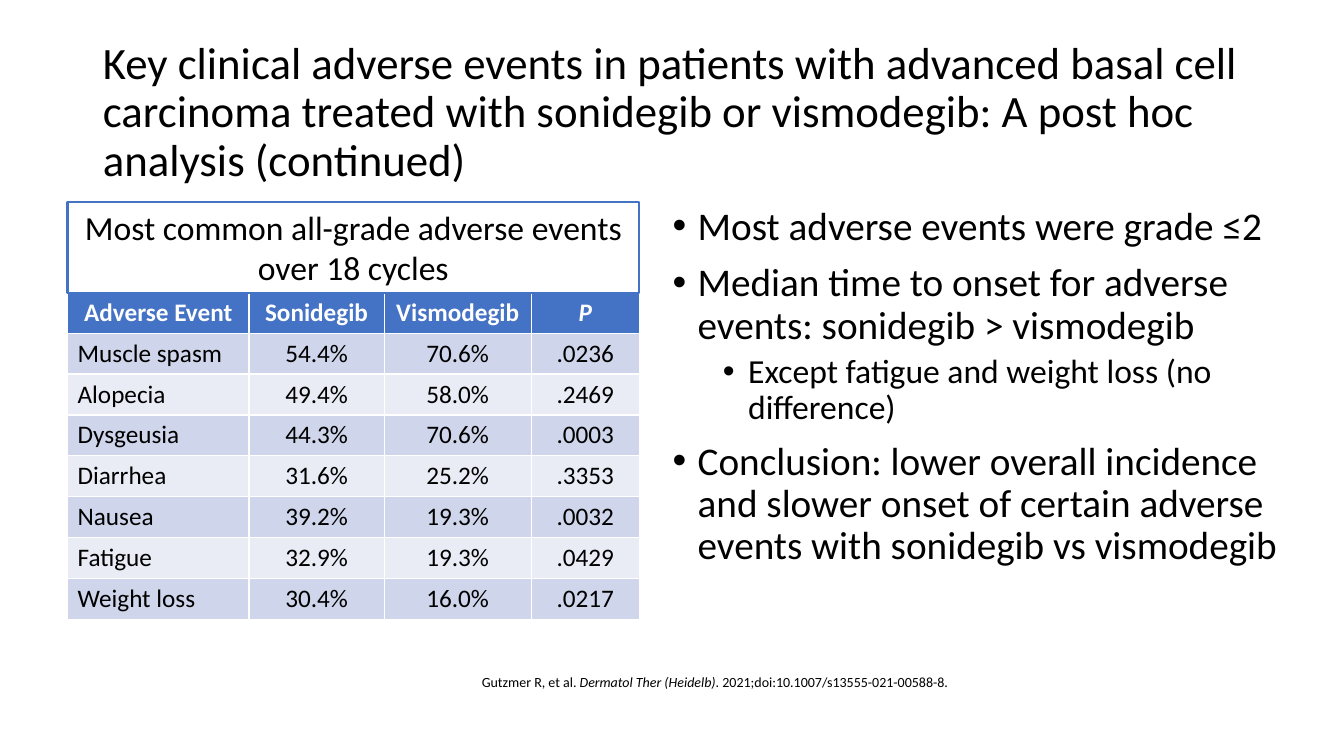
import pptx
import pptx.util
import pptx.dml.color
import pptx.enum.shapes
import pptx.enum.text
import pptx.oxml
import pptx.oxml.ns

Inches = pptx.util.Inches
Pt = pptx.util.Pt
RGBColor = pptx.dml.color.RGBColor
PP_ALIGN = pptx.enum.text.PP_ALIGN
MSO_ANCHOR = pptx.enum.text.MSO_ANCHOR
MSO_AUTO_SIZE = pptx.enum.text.MSO_AUTO_SIZE

TITLE = ("Key clinical adverse events in patients with advanced basal cell carcinoma "
         "treated with sonidegib or vismodegib: A post hoc analysis (continued)")
CAPTION = "Most common all-grade adverse events over 18 cycles"
EVENTS = [
    ("Adverse Event", "Sonidegib", "Vismodegib", "P"),
    ("Muscle spasm", "54.4%", "70.6%", ".0236"),
    ("Alopecia", "49.4%", "58.0%", ".2469"),
    ("Dysgeusia", "44.3%", "70.6%", ".0003"),
    ("Diarrhea", "31.6%", "25.2%", ".3353"),
    ("Nausea", "39.2%", "19.3%", ".0032"),
    ("Fatigue", "32.9%", "19.3%", ".0429"),
    ("Weight loss", "30.4%", "16.0%", ".0217"),
]
FINDINGS = [
    (0, "Most adverse events were grade ≤2"),
    (0, "Median time to onset for adverse events: sonidegib > vismodegib"),
    (1, "Except fatigue and weight loss (no difference)"),
    (0, "Conclusion: lower overall incidence and slower onset of certain "
        "adverse events with sonidegib vs vismodegib"),
]
CITATION = [
    ("Gutzmer R, et al. ", False),
    ("Dermatol Ther (Heidelb)", True),
    (". 2021;doi:10.1007/s13555-021-00588-8.", False),
]

FONT = "Calibri"
BLACK = RGBColor(0x00, 0x00, 0x00)
WHITE = RGBColor(0xFF, 0xFF, 0xFF)
BLUE = RGBColor(0x44, 0x72, 0xC4)
BAND_DARK = RGBColor(0xCF, 0xD5, 0xEA)
BAND_LIGHT = RGBColor(0xE9, 0xEB, 0xF5)

COLUMN_WIDTHS = (1.8, 1.34, 1.46, 1.07)
ROW_HEIGHT = 0.405
TABLE_LEFT = 0.67
CONTENT_TOP = 2
CAPTION_HEIGHT = 0.91
TABLE_TOP = 2.9
LEVELS = [(0.25, 28, 10), (0.75, 24, 5)]


def add_run(paragraph, text, size, color=BLACK, bold=False, italic=False):
    run = paragraph.add_run()
    run.text = text
    run.font.name = FONT
    run.font.size = Pt(size)
    run.font.color.rgb = color
    run.font.bold = bold
    run.font.italic = italic


def place(shape, left, top, width, height):
    shape.left, shape.top = Inches(left), Inches(top)
    shape.width, shape.height = Inches(width), Inches(height)


def add_bullet(paragraph, indent):
    properties = paragraph._p.get_or_add_pPr()
    properties.set("marL", str(Inches(indent)))
    properties.set("indent", str(Inches(-0.25)))
    for tag, name, value in (("a:buFont", "typeface", "Arial"), ("a:buChar", "char", "•")):
        element = pptx.oxml.parse_xml(f'<{tag} {pptx.oxml.ns.nsdecls("a")} {name}="{value}"/>')
        properties.append(element)


def add_title(slide):
    title = slide.shapes.title
    place(title, 0.92, 0.4, 11.5, 1.45)
    frame = title.text_frame
    frame.auto_size = MSO_AUTO_SIZE.NONE
    frame.vertical_anchor = MSO_ANCHOR.MIDDLE
    paragraph = frame.paragraphs[0]
    paragraph.alignment = PP_ALIGN.LEFT
    paragraph.line_spacing = 0.9
    add_run(paragraph, TITLE, 32)


def add_events_table(slide):
    table = slide.shapes.add_table(
        len(EVENTS), len(COLUMN_WIDTHS), Inches(TABLE_LEFT), Inches(TABLE_TOP),
        Inches(sum(COLUMN_WIDTHS)), Inches(ROW_HEIGHT * len(EVENTS))).table
    for column, width in zip(table.columns, COLUMN_WIDTHS):
        column.width = Inches(width)
    for row_index, values in enumerate(EVENTS):
        header = row_index == 0
        band = BAND_DARK if row_index % 2 else BAND_LIGHT
        for column_index, value in enumerate(values):
            cell = table.cell(row_index, column_index)
            cell.fill.solid()
            cell.fill.fore_color.rgb = BLUE if header else band
            paragraph = cell.text_frame.paragraphs[0]
            centred = header or column_index > 0
            paragraph.alignment = PP_ALIGN.CENTER if centred else PP_ALIGN.LEFT
            add_run(paragraph, value, 18, WHITE if header else BLACK,
                    bold=header, italic=value == "P")


def add_findings(slide):
    body = slide.placeholders[1]
    place(body, 6.57, CONTENT_TOP, 6.24, 4.76)
    frame = body.text_frame
    frame.auto_size = MSO_AUTO_SIZE.NONE
    for index, (level, text) in enumerate(FINDINGS):
        paragraph = frame.add_paragraph() if index else frame.paragraphs[0]
        indent, size, space_before = LEVELS[level]
        paragraph.level = level
        add_bullet(paragraph, indent)
        paragraph.line_spacing = 0.9
        paragraph.space_before = Pt(space_before if index else 0)
        add_run(paragraph, text, size)


def add_citation(slide):
    box = slide.shapes.add_textbox(Inches(4.6), Inches(6.62), Inches(4.98), Inches(0.27))
    frame = box.text_frame
    frame.word_wrap = False
    frame.auto_size = MSO_AUTO_SIZE.SHAPE_TO_FIT_TEXT
    paragraph = frame.paragraphs[0]
    paragraph.alignment = PP_ALIGN.CENTER
    paragraph.line_spacing = 1.07
    for text, italic in CITATION:
        add_run(paragraph, text, 10, italic=italic)


def add_caption(slide):
    caption = slide.shapes.add_shape(
        pptx.enum.shapes.MSO_SHAPE.RECTANGLE, Inches(TABLE_LEFT), Inches(CONTENT_TOP),
        Inches(sum(COLUMN_WIDTHS)), Inches(CAPTION_HEIGHT))
    caption.shadow.inherit = False
    caption.fill.background()
    caption.line.color.rgb = BLUE
    caption.line.width = Pt(1.5)
    frame = caption.text_frame
    frame.word_wrap = True
    frame.auto_size = MSO_AUTO_SIZE.SHAPE_TO_FIT_TEXT
    frame.vertical_anchor = MSO_ANCHOR.TOP
    paragraph = frame.paragraphs[0]
    paragraph.alignment = PP_ALIGN.CENTER
    add_run(paragraph, CAPTION, 24)


def main():
    presentation = pptx.Presentation()
    presentation.slide_width = Inches(13.33)
    presentation.slide_height = Inches(7.5)
    slide = presentation.slides.add_slide(presentation.slide_layouts[1])
    add_title(slide)
    add_events_table(slide)
    add_findings(slide)
    add_citation(slide)
    add_caption(slide)
    presentation.save("out.pptx")


if __name__ == "__main__":
    main()
